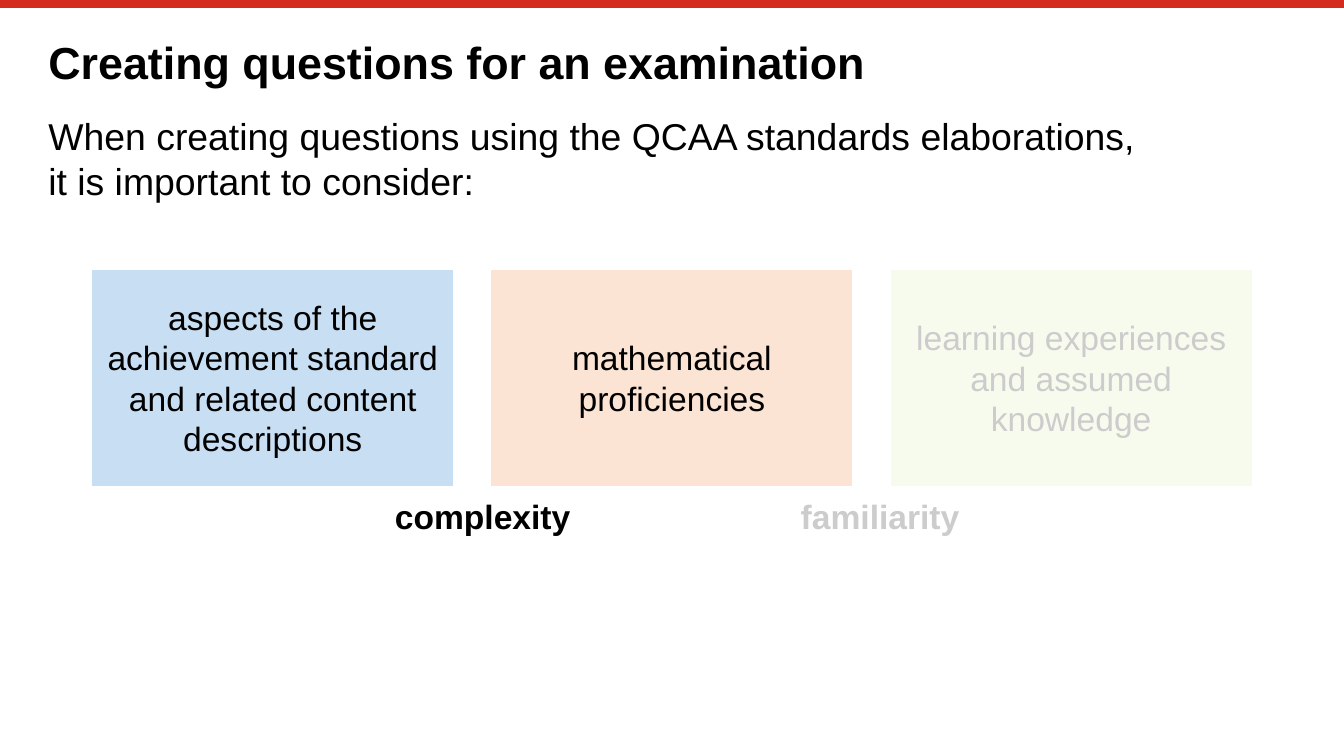
from dataclasses import dataclass

from lxml import etree
from pptx import Presentation
from pptx import util as u
from pptx.dml.color import RGBColor
from pptx.enum import shapes, text
from pptx.oxml import ns

PX = 9144  # EMU in one px, 100 px to the inch
WIDE = 1000
FONT = "Arial"
HUES = {
    "ink": "000000",
    "paper": "FFFFFF",
    "bar": "D52B1E",
    "blue": "C8DEF2",
    "peach": "FBE4D3",
    "green": "D6EBAD",
}


@dataclass
class Box:
    left: int
    top: int
    width: int
    height: int

    def emu(self) -> tuple:
        return tuple(v * PX for v in (self.left, self.top, self.width, self.height))


@dataclass
class Card:
    words: str
    hue: str


@dataclass
class Label:
    words: str
    box: Box


CARDS = [
    Card("aspects of the achievement standard and related content descriptions", "blue"),
    Card("mathematical proficiencies", "peach"),
    Card("learning experiences and assumed knowledge", "green"),
]
FIRST = Box(68, 200, 270, 162)
STEP = 297
LABELS = [
    Label("complexity", Box(284, 364, 165, 40)),
    Label("familiarity", Box(586, 364, 156, 40)),
]
VEILS = [Box(570, 367, 148, 38), Box(651, 156, 305, 218)]


def color(name: str) -> RGBColor:
    return RGBColor.from_string(HUES[name])


def write(shape, words: str, size: int, bold: bool = False, pad: tuple = (0, 0),
          align=text.PP_ALIGN.LEFT, anchor=text.MSO_ANCHOR.TOP, lead: float = 1.0) -> None:
    frame = shape.text_frame
    frame.text = words
    frame.word_wrap = True
    frame.auto_size = text.MSO_AUTO_SIZE.NONE
    frame.vertical_anchor = anchor
    frame.margin_left = frame.margin_right = pad[0] * PX
    frame.margin_top = frame.margin_bottom = pad[1] * PX
    for para in frame.paragraphs:
        para.alignment = align
        para.line_spacing = lead
        para.space_before = u.Pt(0)
        for run in para.runs:
            run.font.name = FONT
            run.font.size = u.Pt(size)
            run.font.bold = bold
            run.font.color.rgb = color("ink")


def block(slide, box: Box, hue: str):
    shape = slide.shapes.add_shape(shapes.MSO_SHAPE.RECTANGLE, *box.emu())
    shape.shadow.inherit = False
    shape.fill.solid()
    shape.fill.fore_color.rgb = color(hue)
    return shape


def card(slide, item: Card, box: Box) -> None:
    shape = block(slide, box, item.hue)
    shape.line.color.rgb = color("paper")
    shape.line.width = u.Pt(1)
    write(shape, item.words, 18, pad=(7, 7), align=text.PP_ALIGN.CENTER,
          anchor=text.MSO_ANCHOR.MIDDLE)


def veil(slide, box: Box) -> None:
    shape = block(slide, box, "paper")
    shape.line.fill.background()
    tint = shape.fill._xPr.find(".//" + ns.qn("a:srgbClr"))
    etree.SubElement(tint, ns.qn("a:alpha"), val="80000")


def main() -> None:
    deck = Presentation()
    deck.slide_width = WIDE * PX
    deck.slide_height = WIDE * PX * 9 // 16
    slide = deck.slides.add_slide(deck.slide_layouts[5])

    # Red bar along the top edge
    bar = slide.shapes.add_connector(
        shapes.MSO_CONNECTOR.STRAIGHT, 0, 3 * PX, WIDE * PX, 3 * PX)
    bar.line.color.rgb = color("bar")
    bar.line.width = u.Pt(4.2)
    etree.SubElement(bar._element.spPr, ns.qn("a:effectLst"))

    # Title and lead-in
    title = slide.shapes.title
    title.left, title.top, title.width, title.height = Box(36, 30, 929, 39).emu()
    title.fill.solid()
    title.fill.fore_color.rgb = color("paper")
    write(title, "Creating questions for an examination", 24, bold=True, lead=0.9)
    intro = slide.shapes.add_textbox(*Box(36, 84, 929, 231).emu())
    write(intro, "When creating questions using the QCAA standards elaborations, \v"
                 "it is important to consider:", 20)

    # Three cards in a row
    for i, item in enumerate(CARDS):
        card(slide, item, Box(FIRST.left + i * STEP, FIRST.top, FIRST.width, FIRST.height))

    # Labels under the gaps
    for label in LABELS:
        note = slide.shapes.add_textbox(*label.box.emu())
        write(note, label.words, 18, bold=True, pad=(10, 5))

    # Veils that fade what comes later
    for box in VEILS:
        veil(slide, box)

    deck.save("out.pptx")


if __name__ == "__main__":
    main()
